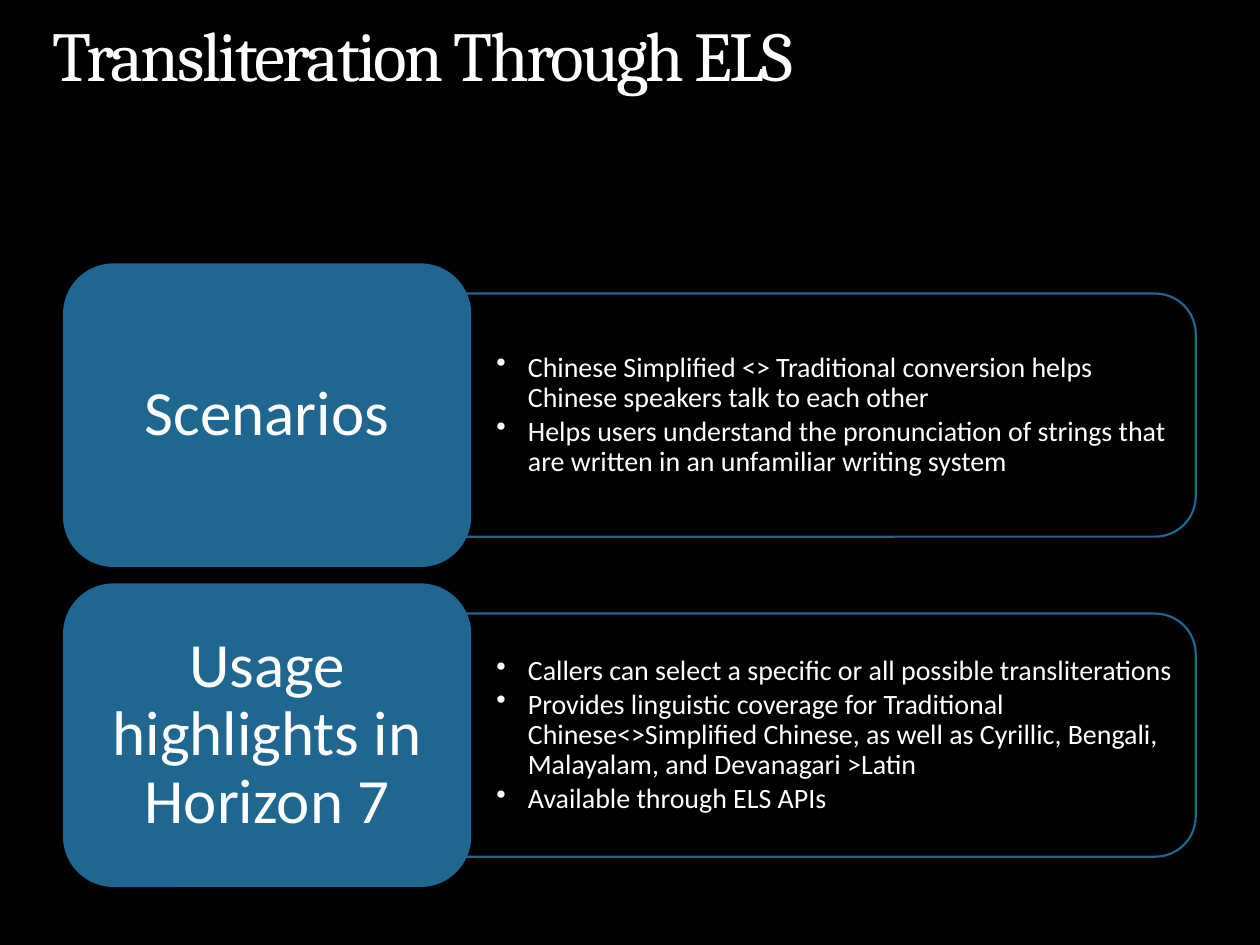
from dataclasses import dataclass

import pptx
import pptx.dml.color
import pptx.enum.shapes
import pptx.enum.text
import pptx.oxml.ns
import pptx.util
from lxml import etree

Inches = pptx.util.Inches
Pt = pptx.util.Pt
RGBColor = pptx.dml.color.RGBColor
MSO_SHAPE = pptx.enum.shapes.MSO_SHAPE
MSO_ANCHOR = pptx.enum.text.MSO_ANCHOR
PP_ALIGN = pptx.enum.text.PP_ALIGN

BLACK = RGBColor(0x00, 0x00, 0x00)
WHITE = RGBColor(0xFF, 0xFF, 0xFF)
BLUE = RGBColor(0x1F, 0x66, 0x91)

ROW_TOP = 2.09
ROW_PITCH = 2.54
LABEL_LEFT, LABEL_WIDTH, LABEL_HEIGHT = 0.5, 3.24, 2.41
PANEL_CENTER, PANEL_LENGTH, PANEL_HEIGHT = 6.45, 6.08, 1.93
DETAIL_WIDTH, DETAIL_HEIGHT = 5.67, 1.74


@dataclass
class Topic:
    label: str
    details: list[str]


TOPICS = [
    Topic("Scenarios", [
        "Chinese Simplified <> Traditional conversion helps Chinese speakers talk to each other",
        "Helps users understand the pronunciation of strings that are written in an unfamiliar writing system",
    ]),
    Topic("Usage highlights in Horizon 7", [
        "Callers can select a specific or all possible transliterations",
        "Provides linguistic coverage for Traditional Chinese<>Simplified Chinese, "
        "as well as Cyrillic, Bengali, Malayalam, and Devanagari >Latin",
        "Available through ELS APIs",
    ]),
]


def prepare_frame(text_frame, horizontal: float, vertical: float, anchor) -> None:
    text_frame.word_wrap = True
    text_frame.vertical_anchor = anchor
    text_frame.margin_left = text_frame.margin_right = Inches(horizontal)
    text_frame.margin_top = text_frame.margin_bottom = Inches(vertical)


def format_paragraph(paragraph, font_name: str, size: int) -> None:
    paragraph.line_spacing = 0.9
    for run in paragraph.runs:
        run.font.name = font_name
        run.font.size = Pt(size)
        run.font.color.rgb = WHITE


def add_bullet(paragraph) -> None:
    properties = paragraph._p.get_or_add_pPr()
    properties.set("marL", str(Inches(0.38)))
    properties.set("indent", str(Inches(-0.25)))
    bullet = etree.SubElement(properties, pptx.oxml.ns.qn("a:buChar"))
    bullet.set("char", "•")


def add_title(slide, text: str) -> None:
    title = slide.shapes.add_textbox(Inches(0.42), Inches(0.17), Inches(9.15), Inches(0.61))
    prepare_frame(title.text_frame, 0, 0, MSO_ANCHOR.TOP)
    title.text_frame.text = text
    paragraph = title.text_frame.paragraphs[0]
    format_paragraph(paragraph, "Cambria", 40)
    paragraph.runs[0]._r.get_or_add_rPr().set("spc", "-150")


def add_panel(slide, middle: float) -> None:
    panel = slide.shapes.add_shape(
        MSO_SHAPE.ROUND_2_SAME_RECTANGLE,
        Inches(PANEL_CENTER - PANEL_HEIGHT / 2), Inches(middle - PANEL_LENGTH / 2),
        Inches(PANEL_HEIGHT), Inches(PANEL_LENGTH))
    panel.rotation = 90
    panel.shadow.inherit = False
    panel.fill.background()
    panel.line.color.rgb = BLUE
    panel.line.width = Pt(1.25)


def add_details(slide, details: list[str], middle: float) -> None:
    box = slide.shapes.add_textbox(
        Inches(LABEL_LEFT + LABEL_WIDTH), Inches(middle - DETAIL_HEIGHT / 2),
        Inches(DETAIL_WIDTH), Inches(DETAIL_HEIGHT))
    prepare_frame(box.text_frame, 0.07, 0.04, MSO_ANCHOR.MIDDLE)
    box.text_frame.text = "\n".join(details)
    for paragraph in box.text_frame.paragraphs:
        add_bullet(paragraph)
        paragraph.space_after = Pt(2)
        format_paragraph(paragraph, "Calibri", 16)


def add_label(slide, text: str, top: float) -> None:
    label = slide.shapes.add_shape(
        MSO_SHAPE.ROUNDED_RECTANGLE, Inches(LABEL_LEFT), Inches(top),
        Inches(LABEL_WIDTH), Inches(LABEL_HEIGHT))
    label.shadow.inherit = False
    label.fill.solid()
    label.fill.fore_color.rgb = BLUE
    label.line.fill.background()
    prepare_frame(label.text_frame, 0.16, 0.08, MSO_ANCHOR.MIDDLE)
    label.text_frame.text = text
    paragraph = label.text_frame.paragraphs[0]
    paragraph.alignment = PP_ALIGN.CENTER
    format_paragraph(paragraph, "Calibri", 36)


def main() -> None:
    presentation = pptx.Presentation()
    presentation.slide_width = Inches(10)
    presentation.slide_height = Inches(7.5)
    slide = presentation.slides.add_slide(presentation.slide_layouts[6])
    slide.background.fill.solid()
    slide.background.fill.fore_color.rgb = BLACK
    add_title(slide, "Transliteration Through ELS")
    for index, topic in enumerate(TOPICS):
        top = ROW_TOP + index * ROW_PITCH
        middle = top + LABEL_HEIGHT / 2
        add_panel(slide, middle)
        add_details(slide, topic.details, middle)
        add_label(slide, topic.label, top)
    presentation.save("out.pptx")


if __name__ == "__main__":
    main()
